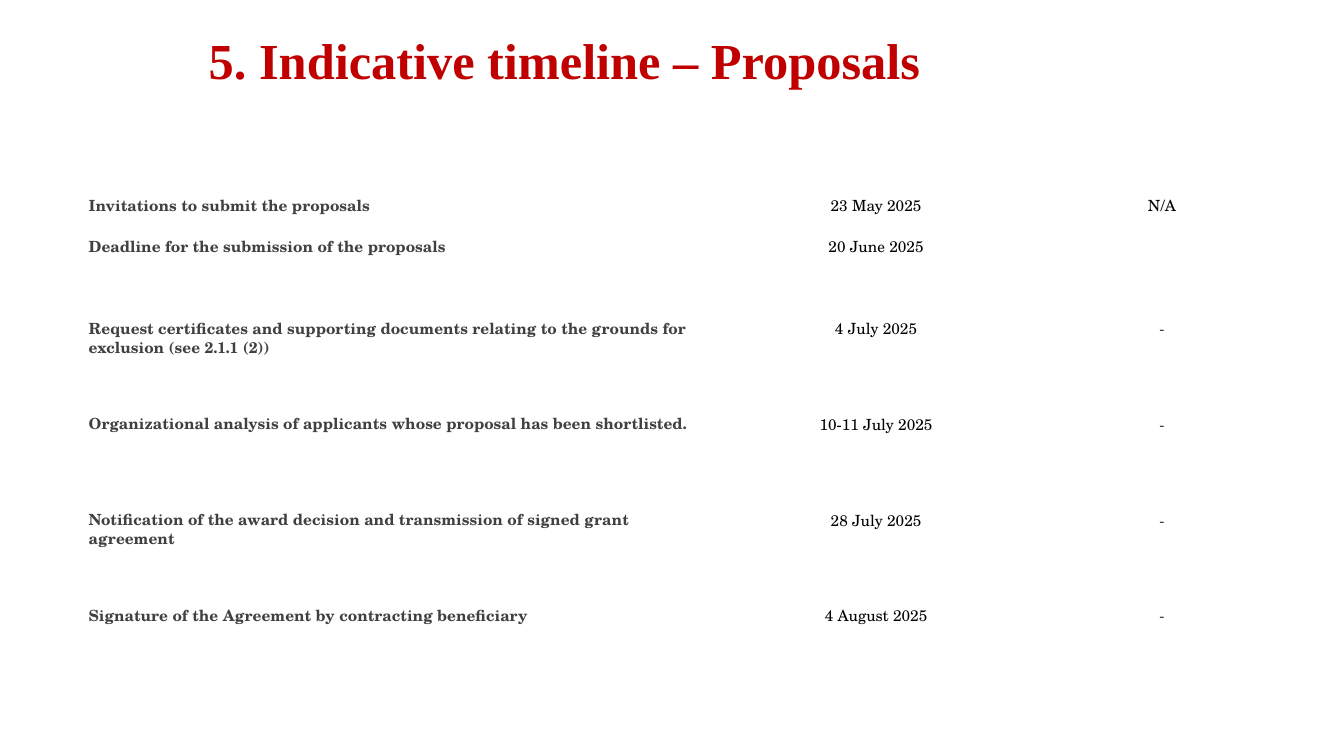
from lxml import etree
from pptx import Presentation
from pptx.dml.color import RGBColor
from pptx.enum.text import MSO_ANCHOR as Anchor, PP_ALIGN as Align
from pptx.oxml.ns import qn
from pptx.util import Inches, Pt

COLORS = {"title": "C00000", "step": "404040", "date": "000000", "border": "FFFFFF"}
COLUMN_WIDTHS = [6.14, 3.58, 2.04]
ROW_HEIGHTS = [0.41, 0.81, 0.95, 0.95, 0.95, 0.68]
TIMELINE = [
    ("Invitations to submit the proposals", "23 May 2025", "N/A"),
    ("Deadline for the submission of the proposals", "20 June 2025", ""),
    ("Request certificates and supporting documents relating to the grounds "
     "for exclusion (see 2.1.1 (2))", "4 July 2025", "-"),
    ("Organizational analysis of applicants whose proposal has been shortlisted.",
     "10-11 July 2025", "-"),
    ("Notification of the award decision and transmission of signed grant agreement",
     "28 July 2025", "-"),
    ("Signature of the Agreement by contracting beneficiary", "4 August 2025", "-"),
]


class TimelineSlide:
    """Holds the fonts and the slide being built."""
    title_font = "Times New Roman"
    body_font = "TeX Gyre Schola"

    def __init__(self, presentation):
        self.slide = presentation.slides.add_slide(presentation.slide_layouts[5])

    def format_font(self, paragraph, name, size, color, bold):
        font = paragraph.font
        font.name, font.size, font.bold = name, Pt(size), bold
        font.color.rgb = RGBColor.from_string(COLORS[color])

    def title(self, text, left, top, width, height):
        shape = self.slide.shapes.title
        shape.left, shape.top = Inches(left), Inches(top)
        shape.width, shape.height = Inches(width), Inches(height)
        frame = shape.text_frame
        frame.text = text
        frame.word_wrap = True
        frame.vertical_anchor = Anchor.TOP
        paragraph = frame.paragraphs[0]
        paragraph.alignment = Align.LEFT
        paragraph.line_spacing = 0.9
        self.format_font(paragraph, self.title_font, 36, "title", True)

    def table(self, rows, left, top, column_widths, row_heights):
        table = self.slide.shapes.add_table(
            len(rows), len(column_widths), Inches(left), Inches(top),
            Inches(sum(column_widths)), Inches(sum(row_heights))).table
        table.first_row = table.horz_banding = False
        for column, width in zip(table.columns, column_widths):
            column.width = Inches(width)
        for row, height, texts in zip(table.rows, row_heights, rows):
            row.height = Inches(height)
            step, date, status = row.cells
            self.cell(step, texts[0], "step", bold=True)
            self.cell(date, texts[1], "date", Align.CENTER, 0.17)
            color = "step" if texts[2] == "-" else "date"
            self.cell(status, texts[2], color, Align.CENTER, 0.12)

    def cell(self, cell, text, color, alignment=Align.LEFT, right_margin=0.07, bold=False):
        self.borders(cell)
        cell.fill.background()
        cell.margin_left, cell.margin_right = Inches(0.07), Inches(right_margin)
        cell.margin_top = cell.margin_bottom = Inches(0.05)
        cell.text = text
        paragraph = cell.text_frame.paragraphs[0]
        paragraph.alignment = alignment
        paragraph.line_spacing = Pt(13.8)
        paragraph.space_after = Pt(6)
        self.format_font(paragraph, self.body_font, 11, color, bold)

    def borders(self, cell):
        properties = cell._tc.get_or_add_tcPr()
        for side in ("lnL", "lnR", "lnT", "lnB"):
            line = etree.SubElement(properties, qn(f"a:{side}"), w=str(Pt(0.75)))
            fill = etree.SubElement(line, qn("a:solidFill"))
            etree.SubElement(fill, qn("a:srgbClr"), val=COLORS["border"])


def main():
    presentation = Presentation()
    presentation.slide_width, presentation.slide_height = Inches(13.33), Inches(7.5)
    slide = TimelineSlide(presentation)
    slide.title("5. Indicative timeline – Proposals", 1.97, 0.31, 10.6, 1.25)
    slide.table(TIMELINE, 0.81, 1.91, COLUMN_WIDTHS, ROW_HEIGHTS)
    presentation.save("out.pptx")


if __name__ == "__main__":
    main()
